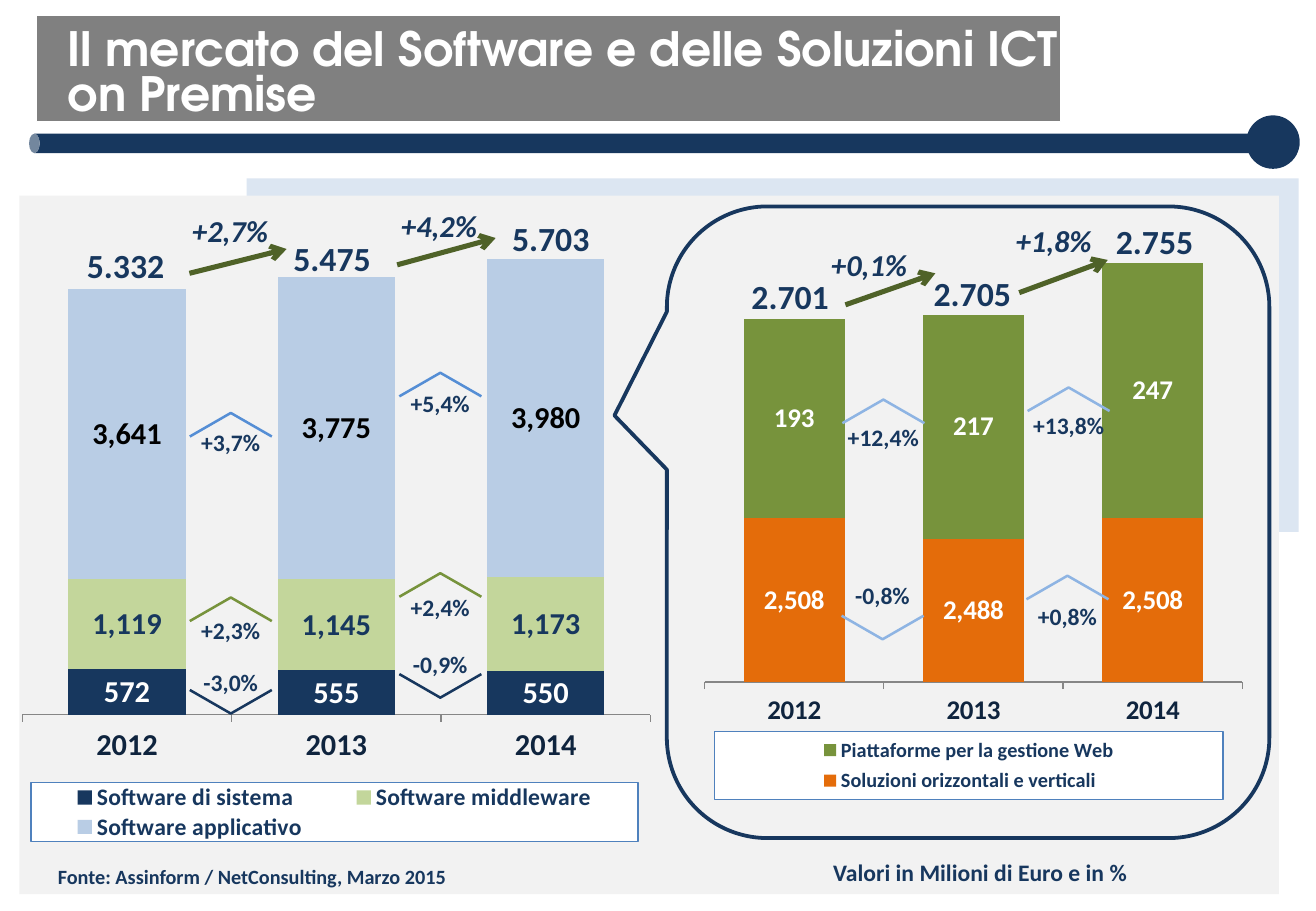
"""Build the slide on the on-premise software and ICT solutions market."""
from dataclasses import dataclass

from lxml import etree
from pptx import Presentation
from pptx.chart.data import CategoryChartData
from pptx.dml.color import RGBColor
from pptx.enum.chart import XL_CHART_TYPE, XL_LEGEND_POSITION, XL_TICK_MARK
from pptx.enum.shapes import MSO_CONNECTOR, MSO_SHAPE
from pptx.enum.text import PP_ALIGN
from pptx.oxml import parse_xml
from pptx.oxml.ns import nsdecls, qn
from pptx.util import Pt

STACKED = XL_CHART_TYPE.COLUMN_STACKED
LEGEND_RIGHT, LEGEND_BOTTOM = XL_LEGEND_POSITION.RIGHT, XL_LEGEND_POSITION.BOTTOM
TICK_OUTSIDE, TICK_NONE = XL_TICK_MARK.OUTSIDE, XL_TICK_MARK.NONE
STRAIGHT = MSO_CONNECTOR.STRAIGHT
RECTANGLE, OVAL, CAN = MSO_SHAPE.RECTANGLE, MSO_SHAPE.OVAL, MSO_SHAPE.CAN
CALLOUT = MSO_SHAPE.ROUNDED_RECTANGULAR_CALLOUT
CENTER, LEFT = PP_ALIGN.CENTER, PP_ALIGN.LEFT


@dataclass(frozen=True)
class Theme:
    """Colours, fonts and type sizes of the slide."""

    navy: str = "17375E"
    ink: str = "0F243E"
    black: str = "000000"
    white: str = "FFFFFF"
    banner: str = "808080"
    panel: str = "F2F2F2"
    backdrop: str = "DCE6F2"
    axis: str = "868686"
    legend_line: str = "4F81BD"
    olive: str = "4F6228"
    green: str = "77933C"
    lime: str = "C3D69B"
    pale_blue: str = "B9CDE5"
    mid_blue: str = "558ED5"
    sky: str = "8EB4E3"
    orange: str = "E46C0A"
    heading: str = "TeX Gyre Adventor"
    body: str = "Calibri"
    chart: str = "Arial"
    title: int = 28
    total: int = 20
    trend: int = 18
    value: int = 16
    note: int = 14
    source: int = 12


class SlideBuilder:
    """Draws styled elements on one slide, with lengths in points."""

    def __init__(self, slide, theme):
        self.shapes = slide.shapes
        self.theme = theme

    def format_font(self, font, size, color, **extra):
        values = {"name": self.theme.body, "bold": True, "size": Pt(size), **extra}
        for key, value in values.items():
            setattr(font, key, value)
        font.color.rgb = RGBColor.from_string(color)

    def outline(self, line, color, width):
        line.color.rgb = RGBColor.from_string(color)
        line.width = Pt(width)

    def shape(self, kind, frame, fill=None, line=None, adjustments=(), rotation=0):
        shape = self.shapes.add_shape(kind, *map(Pt, frame))
        shape.shadow.inherit = False
        shape.rotation = rotation
        for index, value in enumerate(adjustments):
            shape.adjustments[index] = value
        if fill:
            shape.fill.solid()
            shape.fill.fore_color.rgb = RGBColor.from_string(fill)
        else:
            shape.fill.background()
        if line:
            self.outline(shape.line, *line)
        else:
            shape.line.fill.background()

    def text(self, frame, lines, size, color, align=CENTER, wrap=False, spacing=1.0, **extra):
        box = self.shapes.add_textbox(*map(Pt, frame))
        box.text_frame.word_wrap = wrap
        for index, line in enumerate(lines):
            paragraphs = box.text_frame.paragraphs
            para = box.text_frame.add_paragraph() if index else paragraphs[0]
            para.alignment = align
            para.line_spacing = spacing
            span = para.add_run()
            span.text = line
            self.format_font(span.font, size, color, **extra)

    def label(self, center, top, text, size, width=80, **extra):
        frame = (center - width / 2, top, width, size * 1.2 + 7.2)
        self.text(frame, [text], size, self.theme.navy, **extra)

    def arrow(self, start, end):
        arrow = self.shapes.add_connector(STRAIGHT, *map(Pt, (*start, *end)))
        self.outline(arrow.line, self.theme.olive, 3)
        properties = arrow._element.spPr
        etree.SubElement(properties.find(qn("a:ln")), qn("a:tailEnd"), type="arrow")
        etree.SubElement(properties, qn("a:effectLst"))

    def growth(self, center, top, color, text, text_top, rising=True):
        width, height = 48.6, 14
        edge, tip = (top + height, top) if rising else (top, top + height)
        builder = self.shapes.build_freeform(Pt(center - width / 2), Pt(edge), scale=1.0)
        corners = [(center, tip), (center + width / 2, edge)]
        builder.add_line_segments([(Pt(x), Pt(y)) for x, y in corners], close=False)
        chevron = builder.convert_to_shape()
        chevron.shadow.inherit = False
        chevron.fill.background()
        self.outline(chevron.line, color, 1.5)
        self.label(center, text_top, text, self.theme.note)

    def place(self, parent, index, position, target=""):
        for old in parent.findall(qn("c:layout")):
            parent.remove(old)
        layout = etree.Element(qn("c:layout"))
        manual = etree.SubElement(layout, qn("c:manualLayout"))
        values = {"xMode": "edge", "yMode": "edge", **dict(zip("xywh", position))}
        if target:
            values = {"layoutTarget": target, **values}
        for key, value in values.items():
            etree.SubElement(manual, qn(f"c:{key}"), val=str(value))
        parent.insert(index, layout)

    def stacked_chart(self, frame, series_rows, scale, sizes, plot, legend_side, legend_area):
        theme = self.theme
        value_size, legend_size = sizes
        data = CategoryChartData(number_format="#,##0")
        data.categories = ["2012", "2013", "2014"]
        for name, values, *_ in series_rows:
            data.add_series(name, values)
        chart = self.shapes.add_chart(STACKED, *map(Pt, frame), data).chart
        chart.has_title = False
        chart.font.name = theme.chart
        chart.font.size = Pt(theme.trend)

        bars = chart.plots[0]
        bars.gap_width, bars.overlap, bars.vary_by_categories = 78, 100, False
        for series, (_, _, fill, color) in zip(bars.series, series_rows):
            series.format.fill.solid()
            series.format.fill.fore_color.rgb = RGBColor.from_string(fill)
            labels = series.data_labels
            labels.show_value = True
            labels.number_format = "#,##0"
            labels.number_format_is_linked = False
            self.format_font(labels.font, value_size, color)

        years, amounts = chart.category_axis, chart.value_axis
        years.major_tick_mark, years.minor_tick_mark = TICK_OUTSIDE, TICK_NONE
        years.has_major_gridlines = amounts.has_major_gridlines = False
        self.outline(years.format.line, theme.axis, 0.75)
        self.format_font(years.tick_labels.font, value_size, theme.ink)
        amounts.minimum_scale, amounts.maximum_scale = scale
        amounts.visible = False
        self.place(chart._chartSpace.chart.plotArea, 0, plot, "inner")

        chart.has_legend = True
        legend = chart.legend
        legend.position = legend_side
        legend.include_in_layout = False
        self.format_font(legend.font, legend_size, theme.navy)
        element = legend._element
        self.place(element, 1, legend_area)
        element.find(qn("c:txPr")).addprevious(parse_xml(
            f'<c:spPr {nsdecls("c", "a")}>'
            f'<a:solidFill><a:srgbClr val="{theme.white}"/></a:solidFill><a:ln w="9525">'
            f'<a:solidFill><a:srgbClr val="{theme.legend_line}"/></a:solidFill></a:ln></c:spPr>'))


def main():
    theme = Theme()
    deck = Presentation()
    deck.slide_width, deck.slide_height = Pt(780), Pt(540)
    page = SlideBuilder(deck.slides.add_slide(deck.slide_layouts[6]), theme)

    page.shape(CAN, (375.1, -278.6, 11.5, 727.2), theme.navy, adjustments=[0.55], rotation=270)
    page.shape(RECTANGLE, (21.6, 9.4, 607, 62.6), theme.banner, (theme.white, 0.75))
    page.shape(OVAL, (738.7, 68.4, 31.7, 31.7), theme.navy)
    page.shape(RECTANGLE, (146.2, 105.8, 623.5, 209.5), theme.backdrop)
    page.shape(RECTANGLE, (11.5, 116, 746.6, 414), theme.panel)
    page.text((33.1, 14.4, 764.6, 72),
              ["Il mercato del Software e delle Soluzioni ICT", "on Premise"],
              theme.title, theme.white, LEFT, True, 0.8, name=theme.heading)
    page.label(149.5, 509, "Fonte: Assinform / NetConsulting, Marzo 2015", theme.source, 260)
    page.label(581, 504.7, "Valori in Milioni di Euro e in %", theme.note, 210)
    page.shape(CALLOUT, (395.3, 122.4, 357.1, 374.4), line=(theme.navy, 2.25),
               adjustments=[-0.587, -0.169, 0.167])

    page.stacked_chart(
        (412.6, 117.4, 334.8, 363.6),
        [("Soluzioni orizzontali e verticali", (2508, 2488, 2508), theme.orange, theme.white),
         ("Piattaforme per la gestione Web", (193, 217, 247), theme.green, theme.white)],
        (2350, 2800), (theme.value, theme.source), (0.015, 0.03, 0.952, 0.759),
        LEGEND_RIGHT, (0.033, 0.87, 0.9, 0.11))
    page.stacked_chart(
        (4.3, 128.2, 391, 374.4),
        [("Software di sistema", (572, 555, 550), theme.navy, theme.white),
         ("Software middleware", (1119, 1145, 1173), theme.lime, theme.navy),
         ("Software applicativo", (3641, 3775, 3980), theme.pale_blue, theme.black)],
        (0, 6000), (theme.trend, theme.note), (0.023, 0.03, 0.952, 0.759),
        LEGEND_BOTTOM, (0.036, 0.897, 0.92, 0.093))

    for center, top, total in [
            (74.5, 141.8, "5.332"), (196.9, 137.5, "5.475"), (326.5, 125.3, "5.703"),
            (468.4, 159.8, "2.701"), (576.4, 158.4, "2.705"), (684.4, 127.4, "2.755")]:
        page.label(center, top, total, theme.total)

    for center, top, trend, start, end in [
            (136.4, 122.4, "+2,7%", (112.3, 162), (169.9, 147.6)),
            (260.3, 119.5, "+4,2%", (235.4, 157), (293.8, 141.1)),
            (515.2, 142.6, "+0,1%", (501.1, 180.7), (554.4, 162)),
            (624.6, 128.2, "+1,8%", (604.1, 173.5), (656.6, 154.1))]:
        page.label(center, top, trend, theme.trend, italic=True)
        page.arrow(start, end)

    for center, *mark in [
            (136.8, 244.8, theme.mid_blue, "+3,7%", 249.8),
            (136.8, 354.2, theme.green, "+2,3%", 361.4),
            (136.8, 409, theme.navy, "-3,0%", 392.4, False),
            (261, 221, theme.mid_blue, "+5,4%", 226.8),
            (261, 339.8, theme.green, "+2,4%", 347.8),
            (261, 399.6, theme.navy, "-0,9%", 381.6, False),
            (523.6, 236.9, theme.sky, "+12,4%", 247),
            (523.1, 365, theme.sky, "-0,8%", 340.6, False),
            (633.4, 229.7, theme.sky, "+13,8%", 239.8),
            (632.7, 341.3, theme.sky, "+0,8%", 353.5)]:
        page.growth(center, *mark)

    deck.save("out.pptx")


if __name__ == "__main__":
    main()
